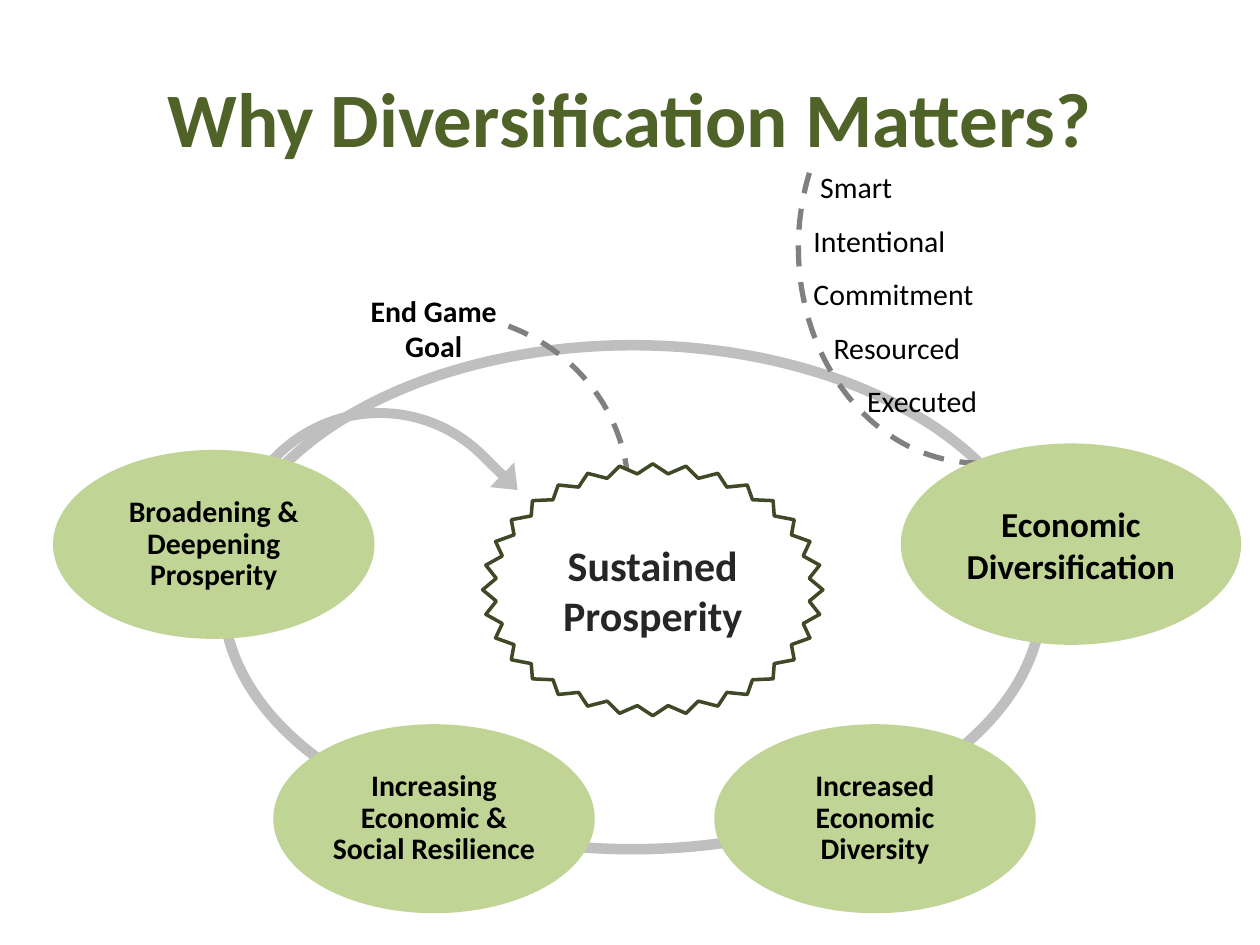
from pptx import Presentation
from pptx import util as u
from pptx.dml.color import RGBColor
from pptx.enum import dml, shapes, text

Cm, Pt = u.Cm, u.Pt
SHAPE = shapes.MSO_SHAPE
CENTER = text.PP_ALIGN.CENTER

BLACK = RGBColor(0x00, 0x00, 0x00)
WHITE = RGBColor(0xFF, 0xFF, 0xFF)
CHARCOAL = RGBColor(0x26, 0x26, 0x26)
DARK_GREEN = RGBColor(0x4F, 0x62, 0x28)
STAR_GREEN = RGBColor(0x3F, 0x49, 0x26)
LIGHT_GREEN = RGBColor(0xBF, 0xD4, 0x95)
LIGHT_GRAY = RGBColor(0xBF, 0xBF, 0xBF)
GRAY = RGBColor(0x80, 0x80, 0x80)

# Boxes are left, top, width, height in centimetres.
TITLE = "Why Diversification Matters?"
STAGE_SIZE = (6.48, 3.81)
DIVERSITY = ((14.4, 14.6), ["Increased Economic Diversity"])
RESILIENCE = ((5.51, 14.6), ["Increasing", "Economic & Social Resilience"])
BROADENING = ((1.07, 9.07), ["Broadening & Deepening Prosperity"])
START = ["Economic", "Diversification"]
END_GAME = ["End Game", "Goal"]
GOAL = ["Sustained", "Prosperity"]
QUALITIES = [("Smart", 3), ("Intentional", 2), ("Commitment", 2),
             ("Resourced", 5), ("Executed", 10)]  # wording, indent steps
INDENT_STEP = 0.135

presentation = Presentation()
presentation.slide_width, presentation.slide_height = Cm(25.4), Cm(19.05)
slide = presentation.slides.add_slide(presentation.slide_layouts[6])


def add_shape(kind, box, fill=None, line=None, width=0, adjustments=()):
    shape = slide.shapes.add_shape(kind, *map(Cm, box))
    shape.shadow.inherit = False
    if fill is None:
        shape.fill.background()
    else:
        shape.fill.solid()
        shape.fill.fore_color.rgb = fill
    if line is None:
        shape.line.fill.background()
    else:
        shape.line.color.rgb = line
        shape.line.width = Pt(width)
    for index, value in enumerate(adjustments):
        shape.adjustments[index] = value
    return shape


def add_dashed_arc(box, start, end):
    """Draw an arc between two angles in degrees."""
    units = [angle * 0.6 for angle in (start, end)]
    arc = add_shape(SHAPE.ARC, box, line=GRAY, width=3, adjustments=units)
    arc.line.dash_style = dml.MSO_LINE.DASH
    return arc


def write(shape, lines, size, color=BLACK, bold=True, align=CENTER,
          spacing=None, anchor=text.MSO_ANCHOR.MIDDLE, wrap=True):
    frame = shape.text_frame
    frame.word_wrap = wrap
    frame.vertical_anchor = anchor
    for index, line in enumerate(lines):
        paragraph = frame.add_paragraph() if index else frame.paragraphs[0]
        paragraph.alignment = align
        paragraph.line_spacing = spacing
        run = paragraph.add_run()
        run.text = line
        run.font.name = "Calibri"
        run.font.size = Pt(size)
        run.font.bold = bold
        run.font.color.rgb = color
    return frame


def add_text(box, lines, size, **style):
    return write(slide.shapes.add_textbox(*map(Cm, box)), lines, size, **style)


def add_stage(position, lines):
    oval = add_shape(SHAPE.OVAL, position + STAGE_SIZE, fill=LIGHT_GREEN)
    write(oval, lines, 17, spacing=Pt(18))


add_text((1.27, 0.76, 22.86, 3.18), [TITLE], 44, color=DARK_GREEN)

# Cycle, with the arrow tucked behind the stages
add_shape(SHAPE.OVAL, (4.5, 6.96, 16.51, 10.16), line=LIGHT_GRAY, width=6)
add_stage(*DIVERSITY)
arrow = add_shape(SHAPE.BENT_ARROW, (5.97, 7.7, 4.04, 3.56), fill=LIGHT_GRAY,
                  adjustments=(0.056, 0.098, 0.123, 0.852))
arrow.rotation = 44.6
add_stage(*RESILIENCE)
add_stage(*BROADENING)

# Callouts
add_text((7.21, 5.77, 3.07, 1.7), END_GAME, 17,
         anchor=text.MSO_ANCHOR.TOP, wrap=False)
add_dashed_arc((5, 6.32, 7.67, 7.24), 292.82, 355)
qualities_arc = add_dashed_arc((15.37, 1.37, 8.69, 7.24), 246.13, 0)
qualities_arc.rotation = 270
qualities_arc._element.spPr.xfrm.set("flipH", "1")
frame = add_text((15.88, 2.92, 5, 5.72), [word for word, _ in QUALITIES], 17,
                 bold=False, align=text.PP_ALIGN.LEFT, spacing=1.5,
                 anchor=text.MSO_ANCHOR.TOP)
for paragraph, (_, steps) in zip(frame.paragraphs, QUALITIES):
    properties = paragraph._p.get_or_add_pPr()
    properties.set("marL", str(Cm(steps * INDENT_STEP)))
    properties.set("indent", "0")

# Starting point and goal
write(add_shape(SHAPE.OVAL, (18.16, 8.94, 6.86, 4.06), fill=LIGHT_GREEN),
      START, 20)
write(add_shape(SHAPE.STAR_32_POINT, (9.73, 9.35, 6.86, 5.08), fill=WHITE,
                line=STAR_GREEN, width=2, adjustments=[0.462]),
      GOAL, 24, color=CHARCOAL)

presentation.save("out.pptx")
